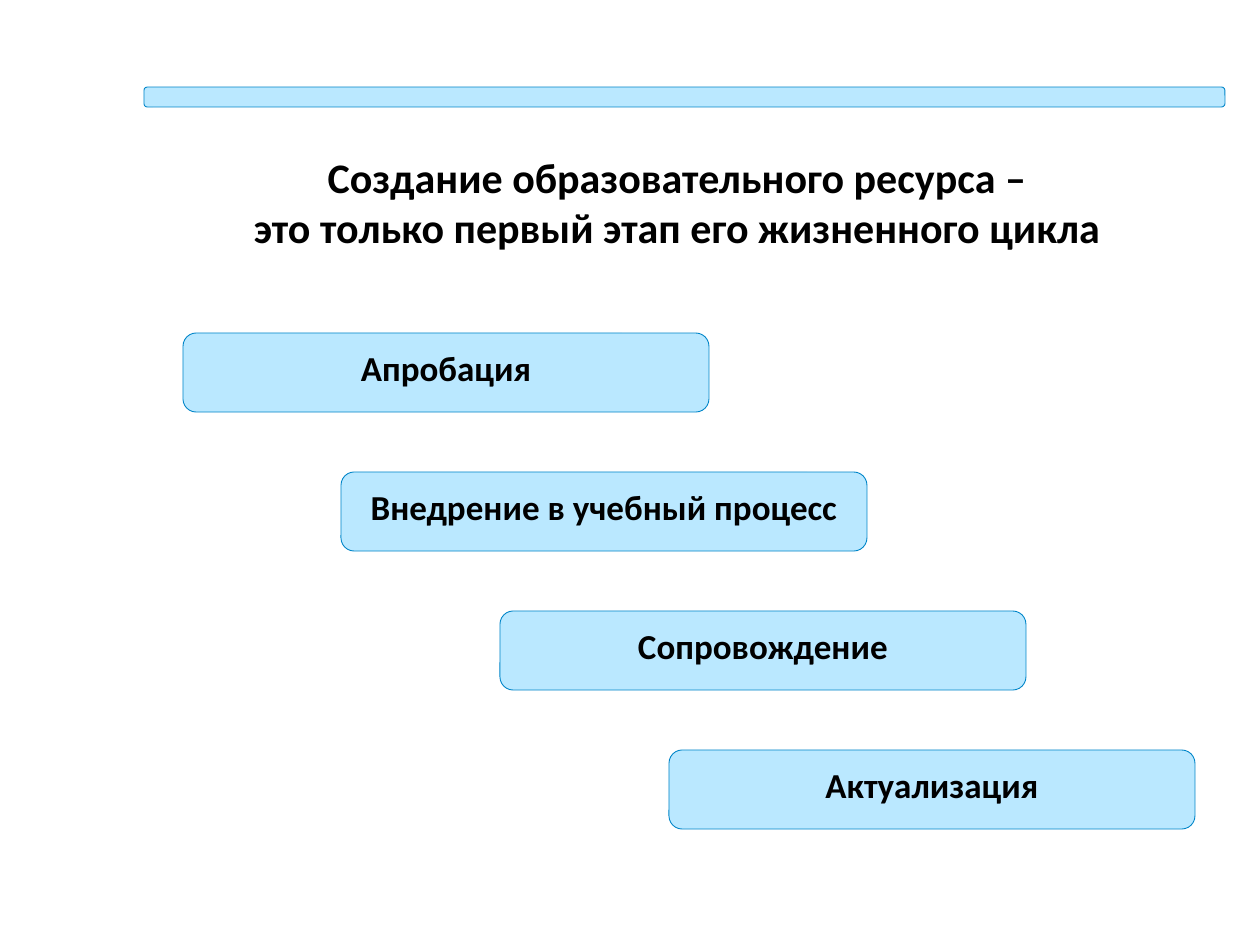
"""Build a slide showing the life-cycle stages of an educational resource."""
from dataclasses import dataclass

from lxml.etree import SubElement
from pptx import Presentation
from pptx.dml.color import RGBColor
from pptx.enum.shapes import MSO_SHAPE
from pptx.enum.text import MSO_AUTO_SIZE, PP_ALIGN
from pptx.oxml.ns import qn
from pptx.shapes.autoshape import Shape
from pptx.util import Emu, Pt

PIXELS_PER_INCH = 126
COLORS = {"fill": "66CCFF", "line": "0085C8", "text": "000000"}
FILL_ALPHA = "45000"
FRAME_FORMAT = {"word_wrap": True, "auto_size": MSO_AUTO_SIZE.SHAPE_TO_FIT_TEXT}
FONT_FORMAT = {"name": "Calibri", "bold": True}
STAGE_TOP, STAGE_PITCH = 333, 139
STAGE_WIDTH, STAGE_HEIGHT = 526, 79
LABEL_OFFSET, LABEL_HEIGHT = 7, 55


@dataclass(frozen=True)
class Box:
    left: int
    top: int
    width: int
    height: int

    def emu(self) -> tuple[Emu, ...]:
        return tuple(px(value) for value in (self.left, self.top, self.width, self.height))


@dataclass(frozen=True)
class Stage:
    label: str
    left: int


STAGES = (
    Stage("Апробация", 183),
    Stage("Внедрение в учебный процесс", 341),
    Stage("Сопровождение", 500),
    Stage("Актуализация", 669),
)
TITLE_LINES = (
    "Создание образовательного ресурса –",
    "это только первый этап его жизненного цикла",
)


def px(value: int) -> Emu:
    return Emu(round(value * 914400 / PIXELS_PER_INCH))


def add_panel(shapes, box: Box) -> Shape:
    panel = shapes.add_shape(MSO_SHAPE.ROUNDED_RECTANGLE, *box.emu())
    panel.shadow.inherit = False
    panel.fill.solid()
    panel.fill.fore_color.rgb = RGBColor.from_string(COLORS["fill"])
    color = panel.fill._xPr.find(qn("a:solidFill"))[0]
    SubElement(color, qn("a:alpha"), val=FILL_ALPHA)
    panel.line.color.rgb = RGBColor.from_string(COLORS["line"])
    panel.line.width = Pt(0.5)
    return panel


def add_text(shapes, box: Box, lines: tuple[str, ...], size: int) -> Shape:
    text_box = shapes.add_textbox(*box.emu())
    frame = text_box.text_frame
    for name, value in FRAME_FORMAT.items():
        setattr(frame, name, value)
    frame.text = "\n".join(lines)
    for paragraph in frame.paragraphs:
        paragraph.alignment = PP_ALIGN.CENTER
        font = paragraph.runs[0].font
        for name, value in {**FONT_FORMAT, "size": Pt(size)}.items():
            setattr(font, name, value)
        font.color.rgb = RGBColor.from_string(COLORS["text"])
    return text_box


def add_stage(shapes, stage: Stage, top: int) -> None:
    group = shapes.add_group_shape()
    add_panel(group.shapes, Box(stage.left, top, STAGE_WIDTH, STAGE_HEIGHT))
    label_box = Box(stage.left, top + LABEL_OFFSET, STAGE_WIDTH, LABEL_HEIGHT)
    add_text(group.shapes, label_box, (stage.label,), 20)


def main() -> None:
    presentation = Presentation()
    presentation.slide_width, presentation.slide_height = px(1260), px(945)
    slide = presentation.slides.add_slide(presentation.slide_layouts[6])
    add_panel(slide.shapes, Box(144, 87, 1081, 20))
    add_text(slide.shapes, Box(146, 145, 1062, 115), TITLE_LINES, 24)
    for index, stage in enumerate(STAGES):
        add_stage(slide.shapes, stage, STAGE_TOP + index * STAGE_PITCH)
    presentation.save("out.pptx")


if __name__ == "__main__":
    main()
